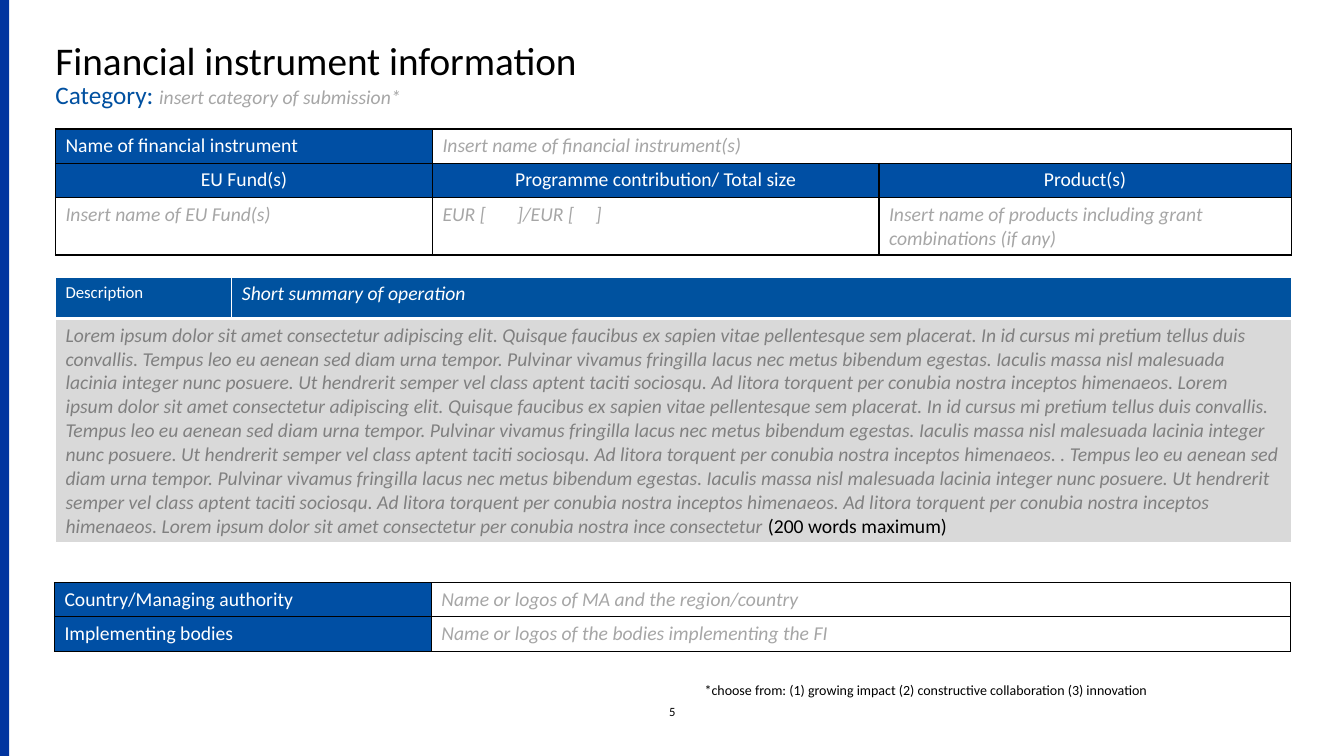
import pptx
import pptx.dml.color
import pptx.enum.shapes
import pptx.enum.text
import pptx.oxml
import pptx.oxml.ns
import pptx.util

ALIGN = pptx.enum.text.PP_ALIGN
LOREM = "Lorem ipsum dolor sit amet consectetur"
OPENING = (LOREM + " adipiscing elit. Quisque faucibus ex sapien vitae pellentesque sem placerat. "
           "In id cursus mi pretium tellus duis convallis. ")
TEMPUS = ("Tempus leo eu aenean sed diam urna tempor. Pulvinar vivamus fringilla lacus nec metus "
          "bibendum egestas. Iaculis massa nisl malesuada lacinia integer nunc posuere. "
          "Ut hendrerit semper vel class aptent taciti sociosqu. ")
LITORA = "Ad litora torquent per conubia nostra inceptos himenaeos. "
SUMMARY = ((OPENING + TEMPUS + LITORA) * 2 + ". " + TEMPUS + LITORA * 2
           + LOREM + " per conubia nostra ince consectetur ")


def rgb(value):
    return pptx.dml.color.RGBColor.from_string(value)


class Deck:
    FONT = "Calibri"
    COLUMNS = 133.33
    ROWS = 75
    STYLES = {
        "label": dict(fill="004FA4", color="FFFFFF"),
        "heading": dict(fill="004FA4", color="FFFFFF", align=ALIGN.CENTER),
        "hint": dict(color="A6A6A6", italic=True),
        "topic": dict(fill="00529F", color="FFFFFF", size=12),
        "summary": dict(fill="00529F", color="FFFFFF", italic=True),
        "body": dict(fill="D9D9D9", color="808080", italic=True),
    }

    def __init__(self):
        self.prs = pptx.Presentation()
        self.prs.slide_width = pptx.util.Inches(13.33)
        self.prs.slide_height = pptx.util.Inches(7.5)
        self.s = self.prs.slides.add_slide(self.prs.slide_layouts[6])

    def x(self, columns):
        return round(self.prs.slide_width * columns / self.COLUMNS)

    def y(self, rows):
        return round(self.prs.slide_height * rows / self.ROWS)

    def box(self, left, top, width, height):
        return self.x(left), self.y(top), self.x(width), self.y(height)

    def format(self, r, size, color, italic=False):
        r.font.name = self.FONT
        r.font.size = pptx.util.Pt(size)
        r.font.bold = False
        r.font.italic = italic
        r.font.color.rgb = rgb(color)

    def bar(self, area, color):
        sp = self.s.shapes.add_shape(pptx.enum.shapes.MSO_SHAPE.RECTANGLE, *self.box(*area))
        sp.shadow.inherit = False
        sp.fill.solid()
        sp.fill.fore_color.rgb = rgb(color)
        sp.line.fill.background()

    def text(self, area, text, size, color="000000", align=ALIGN.LEFT, wrap=True):
        tf = self.s.shapes.add_textbox(*self.box(*area)).text_frame
        tf.margin_left = tf.margin_right = tf.margin_top = tf.margin_bottom = 0
        tf.word_wrap = wrap
        tf.text = text
        p = tf.paragraphs[0]
        p.alignment = align
        self.format(p.runs[0], size, color)
        return p

    def add_run(self, p, text, size, color, italic=False):
        r = p.add_run()
        r.text = text
        self.format(r, size, color, italic)

    def tabs(self, p, stops):
        tab_list = pptx.oxml.parse_xml(f'<a:tabLst {pptx.oxml.ns.nsdecls("a")}/>')
        for stop in stops:
            tab = tab_list.makeelement(pptx.oxml.ns.qn("a:tab"), {"pos": str(self.x(stop)), "algn": "l"})
            tab_list.append(tab)
        p._p.get_or_add_pPr().append(tab_list)

    def borders(self, cell, color, bottom):
        for i, side in enumerate("LRTB"):
            width = pptx.util.Pt(bottom if side == "B" else 1)
            line = pptx.oxml.parse_xml(
                f'<a:ln{side} {pptx.oxml.ns.nsdecls("a")} w="{width}"><a:solidFill>'
                f'<a:srgbClr val="{color}"/></a:solidFill></a:ln{side}>')
            cell._tc.get_or_add_tcPr().insert(i, line)

    def cell(self, cell, text, fill=None, color="000000", size=14, italic=False, align=ALIGN.LEFT):
        if fill:
            cell.fill.solid()
            cell.fill.fore_color.rgb = rgb(fill)
        else:
            cell.fill.background()
        p = cell.text_frame.paragraphs[0]
        p.text = text
        p.alignment = align
        for r in p.runs:
            self.format(r, size, color, italic)

    def table(self, left, top, widths, heights, rows, border="000000", bottoms=None):
        area = self.box(left, top, sum(widths), sum(heights))
        tbl = self.s.shapes.add_table(len(rows), len(widths), *area).table
        tbl.first_row = tbl.horz_banding = False
        for column, width in zip(tbl.columns, widths):
            column.width = self.x(width)
        for i, row in enumerate(rows):
            tbl.rows[i].height = self.y(heights[i])
            for j in range(len(widths)):
                if j < len(row):
                    style, text = row[j]
                    self.cell(tbl.cell(i, j), text, **self.STYLES[style])
                self.borders(tbl.cell(i, j), border, bottoms[i] if bottoms else 1)
            if len(row) < len(widths):
                tbl.cell(i, len(row) - 1).merge(tbl.cell(i, len(widths) - 1))
        return tbl


def main():
    deck = Deck()
    deck.bar((0, 0, 0.9, 75), "00349F")
    deck.text((5.5, 3.6, 95, 3.4), "Financial instrument information", 28)
    category = deck.text((5.5, 7.9, 95, 3.9), "Category: ", 18, "0050A0")
    deck.add_run(category, "insert category of submission*", 14, "A6A6A6", True)

    instrument = deck.table(5.5, 12.8, (37.4, 44.3, 40.9), (3.4, 3.4, 5.7), [
        [("label", "Name of financial instrument"), ("hint", "Insert name of financial instrument(s)")],
        [("heading", "EU Fund(s)"), ("heading", "Programme contribution/ Total size"),
         ("heading", "Product(s)")],
        [("hint", "Insert name of EU Fund(s)"), ("hint", "EUR [\t]/EUR [\t]"),
         ("hint", "Insert name of products including grant combinations (if any)")],
    ])
    deck.tabs(instrument.cell(2, 1).text_frame.paragraphs[0], (7.4, 15.2))

    description = deck.table(5.5, 27.5, (17.5, 105.1), (4.1, 22.2), [
        [("topic", "Description"), ("summary", "Short summary of operation")],
        [("body", SUMMARY)],
    ], border="FFFFFF", bottoms=(3, 1))
    deck.add_run(description.cell(1, 0).text_frame.paragraphs[0], "(200 words maximum)", 14, "000000")

    deck.table(5.4, 57.8, (37.4, 85.2), (3.4, 3.4), [
        [("label", "Country/Managing authority"), ("hint", "Name or logos of MA and the region/country")],
        [("label", "Implementing bodies"), ("hint", "Name or logos of the bodies implementing the FI")],
    ])
    deck.text((69.9, 67.6, 54.3, 3.9),
              "*choose from: (1) growing impact (2) constructive collaboration (3) innovation",
              10, wrap=False)
    deck.text((65, 69.8, 3.4, 1.5), "5", 9, align=ALIGN.CENTER)
    deck.prs.save("out.pptx")


if __name__ == "__main__":
    main()
